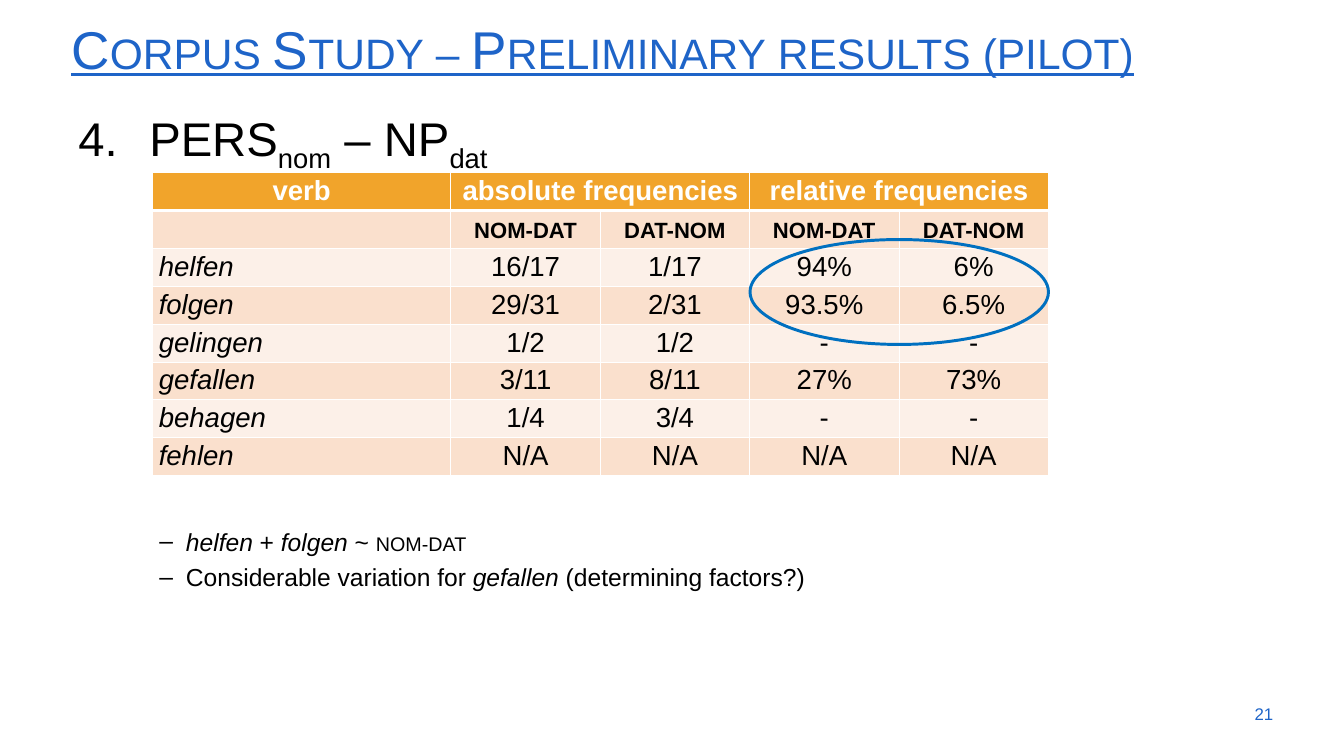
from dataclasses import dataclass, field
from typing import Any

from lxml.etree import SubElement
from pptx import Presentation
from pptx.dml.color import RGBColor
from pptx.enum.shapes import MSO_SHAPE as Shape
from pptx.enum.text import MSO_ANCHOR as Anchor, PP_ALIGN as Align
from pptx.oxml.ns import qn
from pptx.util import Pt


@dataclass(frozen=True)
class Theme:
    """Colours and type sizes of the slide."""
    font: str = "Arial"
    blue: str = "1E64C8"
    ring: str = "0070C0"
    black: str = "000000"
    white: str = "FFFFFF"
    header: str = "F1A42B"
    bands: tuple[str, str] = ("FCF0E8", "FAE0CD")
    title_size: float = 54
    heading_size: float = 48
    table_size: float = 28
    note_size: float = 25
    number_size: float = 17.1


THEME = Theme()


@dataclass(frozen=True)
class Span:
    """A piece of text with its own format."""
    text: str
    font: dict[str, Any] = field(default_factory=dict)
    raw: dict[str, str] = field(default_factory=dict)


@dataclass(frozen=True)
class TextBlock:
    """A text box with paragraphs of one size and colour."""
    box: tuple[float, float, float, float]
    paragraphs: list[list[Span]]
    size: float
    colour: str = THEME.black
    spacing: float = 1.0
    anchor: Any = Anchor.TOP
    align: Any = Align.LEFT
    bullet: tuple[str, dict[str, str]] | None = None
    indent: tuple[float, float] = (0, 0)


SMALL_CAPS = {"cap": "small"}
SUBSCRIPT = {"baseline": "-25000"}
ITALIC = {"italic": True}
HEADER_HEIGHT = 39.2
ROW_HEIGHT = 38.45
COLUMN_WIDTHS = (303.2, 151.7, 151.7, 151.7, 151.7)
HEADERS = {0: "verb", 1: "absolute frequencies", 3: "relative frequencies"}
ROWS = (
    ("", "nom-dat", "dat-nom", "nom-dat", "dat-nom"),
    ("helfen", "16/17", "1/17", "94%", "6%"),
    ("folgen", "29/31", "2/31", "93.5%", "6.5%"),
    ("gelingen", "1/2", "1/2", "-", "-"),
    ("gefallen", "3/11", "8/11", "27%", "73%"),
    ("behagen", "1/4", "3/4", "-", "-"),
    ("fehlen", "N/A", "N/A", "N/A", "N/A"),
)
BLOCKS = (
    TextBlock((65.5, 20.2, 1237, 67.7),
              [[Span("Corpus Study – Preliminary results (pilot)", {"underline": True}, SMALL_CAPS)]],
              THEME.title_size, THEME.blue, 0.9),
    TextBlock((65.8, 94.3, 1236.2, 527),
              [[Span("PERS"), Span("nom", raw=SUBSCRIPT), Span(" – NP"), Span("dat", raw=SUBSCRIPT)]],
              THEME.heading_size, spacing=1.2,
              bullet=("a:buAutoNum", {"type": "arabicPeriod", "startAt": "4"}), indent=(78.8, -72)),
    TextBlock((1227.6, 704.9, 72.7, 41), [[Span("21")]], THEME.number_size, THEME.blue,
              anchor=Anchor.MIDDLE, align=Align.RIGHT),
    TextBlock((154.8, 525.6, 910, 76.3),
              [[Span("helfen", ITALIC), Span(" + "), Span("folgen", ITALIC), Span(" ~ "),
                Span("nom-dat", raw=SMALL_CAPS)],
               [Span("Considerable variation for "), Span("gefallen", ITALIC),
                Span(" (determining factors?)")]],
              THEME.note_size, spacing=1.2,
              bullet=("a:buChar", {"char": "–"}), indent=(27, -27)),
)


def apply(target: Any, values: dict[str, Any]) -> None:
    """Set each named attribute of the target."""
    for name, value in values.items():
        setattr(target, name, value)


def add_span(paragraph: Any, span: Span, size: float, colour: str) -> None:
    """Append one formatted run to a paragraph."""
    run = paragraph.add_run()
    run.text = span.text
    apply(run.font, {"name": THEME.font, "size": Pt(size), **span.font})
    run.font.color.rgb = RGBColor.from_string(colour)
    properties = run._r.get_or_add_rPr()
    for name, value in span.raw.items():
        properties.set(name, value)


def add_block(slide: Any, block: TextBlock) -> None:
    """Draw a text box with its paragraphs."""
    frame = slide.shapes.add_textbox(*map(Pt, block.box)).text_frame
    apply(frame, {"word_wrap": True, "vertical_anchor": block.anchor})
    for index, spans in enumerate(block.paragraphs):
        paragraph = frame.add_paragraph() if index else frame.paragraphs[0]
        apply(paragraph, {"alignment": block.align, "line_spacing": block.spacing})
        if block.bullet:
            tag, attributes = block.bullet
            properties = paragraph._p.get_or_add_pPr()
            properties.set("marL", str(Pt(block.indent[0])))
            properties.set("indent", str(Pt(block.indent[1])))
            SubElement(properties, qn("a:buFont"), typeface=THEME.font)
            SubElement(properties, qn(tag), attributes)
        for span in spans:
            add_span(paragraph, span, block.size, block.colour)


def style_cell(cell: Any, fill: str, top: float, bottom: float) -> None:
    """Give a cell its margins, white borders and fill."""
    apply(cell, {"margin_top": Pt(3), "margin_bottom": Pt(3),
                 "margin_left": Pt(6.5), "margin_right": Pt(6.5)})
    properties = cell._tc.get_or_add_tcPr()
    for side, width in {"L": 1, "R": 1, "T": top, "B": bottom}.items():
        line = SubElement(properties, qn(f"a:ln{side}"), w=str(Pt(width)))
        SubElement(SubElement(line, qn("a:solidFill")), qn("a:srgbClr"), val=THEME.white)
    cell.fill.solid()
    cell.fill.fore_color.rgb = RGBColor.from_string(fill)


def write_cell(cell: Any, span: Span, colour: str, align: Any) -> None:
    """Write one span of text into a cell."""
    paragraph = cell.text_frame.paragraphs[0]
    paragraph.alignment = align
    if span.text:
        add_span(paragraph, span, THEME.table_size, colour)


def add_frequency_table(slide: Any) -> None:
    """Draw the table of verb frequencies."""
    table = slide.shapes.add_table(len(ROWS) + 1, len(COLUMN_WIDTHS), Pt(154.8), Pt(174.96),
                                   Pt(sum(COLUMN_WIDTHS)),
                                   Pt(HEADER_HEIGHT + ROW_HEIGHT * len(ROWS))).table
    apply(table, {"first_row": False, "horz_banding": False})
    for column, width in zip(table.columns, COLUMN_WIDTHS):
        column.width = Pt(width)
    for index, row in enumerate(table.rows):
        row.height = Pt(ROW_HEIGHT if index else HEADER_HEIGHT)
        fill = THEME.bands[index % 2] if index else THEME.header
        for cell in row.cells:
            style_cell(cell, fill, 3 if index == 1 else 1, 1 if index else 3)
    for column, text in HEADERS.items():
        if column:
            table.cell(0, column).merge(table.cell(0, column + 1))
        write_cell(table.cell(0, column), Span(text, {"bold": True}), THEME.white, Align.CENTER)
    for index, values in enumerate(ROWS, 1):
        for column, text in enumerate(values):
            if index == 1:
                span = Span(text, {"bold": True}, SMALL_CAPS)
            else:
                span = Span(text, {"italic": column == 0})
            write_cell(table.cell(index, column), span, THEME.black,
                       Align.CENTER if column else Align.LEFT)


def add_ring(slide: Any) -> None:
    """Draw the ellipse around the highlighted frequencies."""
    ring = slide.shapes.add_shape(Shape.OVAL, Pt(761.8), Pt(243.4), Pt(303.1), Pt(106.6))
    ring.shadow.inherit = False
    ring.fill.background()
    ring.line.color.rgb = RGBColor.from_string(THEME.ring)
    ring.line.width = Pt(3)


def main() -> None:
    """Build and save the slide."""
    presentation = Presentation()
    apply(presentation, {"slide_width": Pt(1365.12), "slide_height": Pt(768.24)})
    slide = presentation.slides.add_slide(presentation.slide_layouts[6])
    add_frequency_table(slide)
    for block in BLOCKS:
        add_block(slide, block)
    add_ring(slide)
    presentation.save("out.pptx")


if __name__ == "__main__":
    main()
